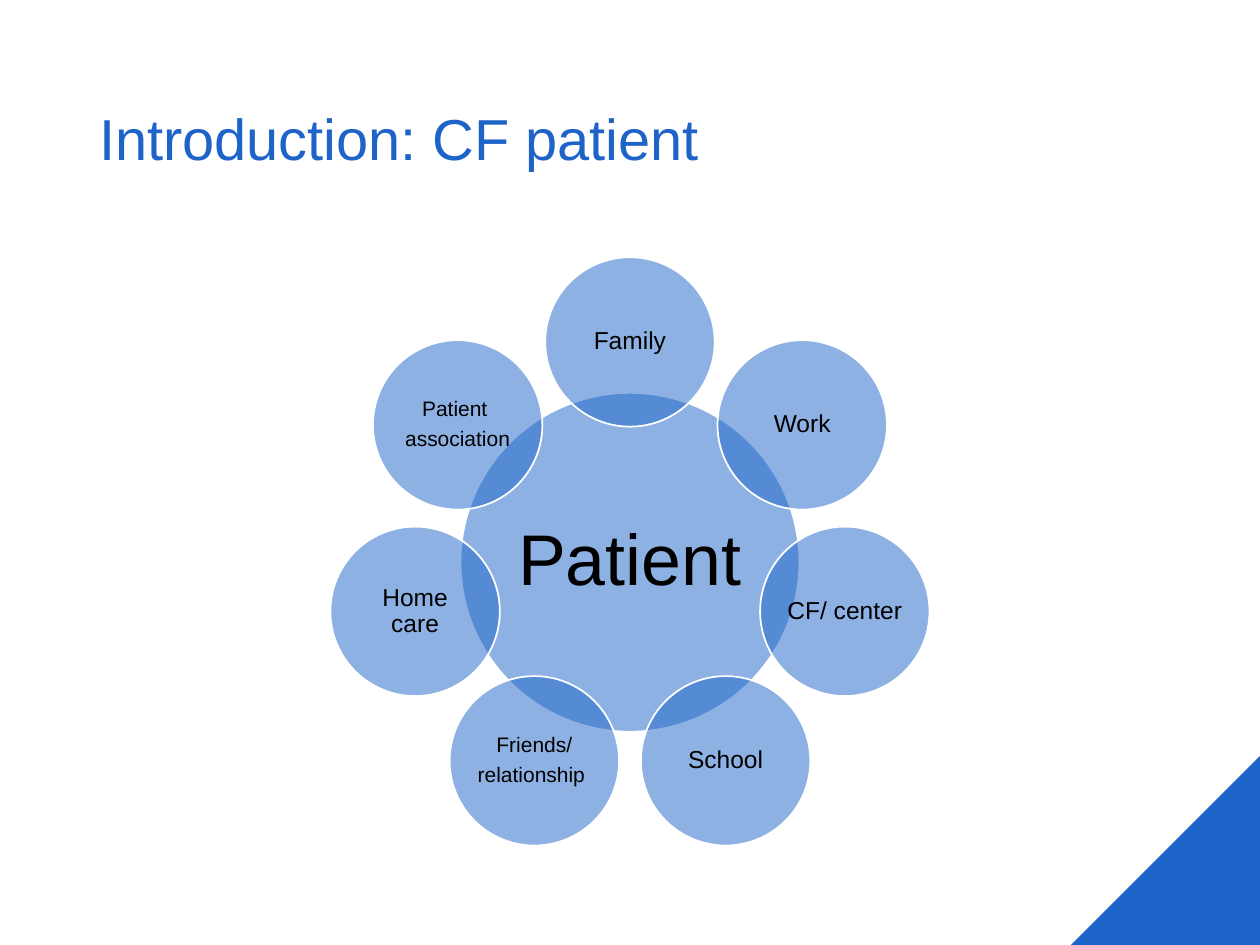
from dataclasses import dataclass
from math import cos, pi, sin

from lxml.etree import SubElement
from pptx import Presentation
from pptx.dml.color import RGBColor
from pptx.enum.shapes import MSO_SHAPE as Preset
from pptx.enum.text import MSO_ANCHOR as Anchor, MSO_AUTO_SIZE as AutoSize, PP_ALIGN as Align
from pptx.oxml.ns import qn
from pptx.util import Pt


@dataclass(frozen=True)
class Theme:
    font: str = "Arial"
    blue: RGBColor = RGBColor(0x1E, 0x64, 0xC8)
    white: RGBColor = RGBColor(0xFF, 0xFF, 0xFF)
    black: RGBColor = RGBColor(0, 0, 0)
    circle_opacity: int = 50
    outline: float = 1
    title_size: int = 33
    hub_size: int = 41
    petal_size: int = 14
    small_petal_size: int = 12
    line_spacing: float = 0.9
    space_after: float = 0.35  # share of the type size


THEME = Theme()
SLIDE_WIDTH, SLIDE_HEIGHT = 720, 540
CORNER_SIDE = 108

HUB = "Patient"
# Clockwise from the top; each petal is a tuple of paragraphs.
PETALS = [
    ("Family",),
    ("Work",),
    ("CF/ center",),
    ("School",),
    ("Friends/", "relationship "),
    ("Home care",),
    ("Patient ", "association"),
]


def write_text(frame, paragraphs, size, color, align, space_after=0):
    for index, words in enumerate(paragraphs):
        paragraph = frame.paragraphs[0] if index == 0 else frame.add_paragraph()
        paragraph.alignment = align
        paragraph.line_spacing = THEME.line_spacing
        paragraph.space_after = Pt(space_after)
        run = paragraph.add_run()
        run.text = words
        for name, value in {"name": THEME.font, "size": Pt(size)}.items():
            setattr(run.font, name, value)
        run.font.color.rgb = color


def place_title(title, left, top, width, height):
    box = {"left": left, "top": top, "width": width, "height": height}
    for name, value in box.items():
        setattr(title, name, Pt(value))
    frame = title.text_frame
    for name, value in {"vertical_anchor": Anchor.MIDDLE, "word_wrap": True,
                        "auto_size": AutoSize.NONE}.items():
        setattr(frame, name, value)
    write_text(frame, ["Introduction: CF patient"], THEME.title_size, THEME.blue, Align.LEFT)


def add_corner(shapes, left, top, side):
    corner = shapes.add_shape(Preset.RIGHT_TRIANGLE, Pt(left), Pt(top), Pt(side), Pt(side))
    corner.shadow.inherit = False
    corner.fill.solid()
    corner.fill.fore_color.rgb = THEME.blue
    corner.line.fill.background()
    corner._element.spPr.find(qn("a:xfrm")).set("flipH", "1")


def add_circle(shapes, center_x, center_y, diameter, paragraphs, size, inset):
    """Add a translucent labelled circle around the given centre."""
    circle = shapes.add_shape(Preset.OVAL, Pt(center_x - diameter / 2),
                              Pt(center_y - diameter / 2), Pt(diameter), Pt(diameter))
    circle.shadow.inherit = False
    circle.fill.solid()
    circle.fill.fore_color.rgb = THEME.blue
    tint = circle._element.spPr.find(qn("a:solidFill")).find(qn("a:srgbClr"))
    SubElement(tint, qn("a:alpha")).set("val", str(THEME.circle_opacity * 1000))
    circle.line.color.rgb = THEME.white
    circle.line.width = Pt(THEME.outline)

    frame = circle.text_frame
    frame.word_wrap = True
    frame.vertical_anchor = Anchor.MIDDLE
    for side in ("left", "top", "right", "bottom"):
        setattr(frame, f"margin_{side}", Pt(inset))
    write_text(frame, paragraphs, size, THEME.black, Align.CENTER, size * THEME.space_after)


def add_radial_venn(shapes, left, top, width, height):
    """Fit a hub and its ring of half-size petals under the top middle of the box."""
    step = 2 * pi / len(PETALS)
    # The box height spans the top petal, the ring and the lowest petals.
    petal = height * 0.288
    ring = (height - petal) / (1 + cos(step / 2))
    center_x = left + width / 2
    center_y = top + petal / 2 + ring

    venn = shapes.add_group_shape().shapes
    add_circle(venn, center_x, center_y, 2 * petal, [HUB], THEME.hub_size, 4)
    for index, paragraphs in enumerate(PETALS):
        size = THEME.petal_size if len(paragraphs) == 1 else THEME.small_petal_size
        add_circle(venn, center_x + ring * sin(index * step),
                   center_y - ring * cos(index * step), petal, paragraphs, size, 1)


def main():
    deck = Presentation()
    deck.slide_width, deck.slide_height = Pt(SLIDE_WIDTH), Pt(SLIDE_HEIGHT)
    slide = deck.slides.add_slide(deck.slide_layouts[5])
    slide.background.fill.solid()
    slide.background.fill.fore_color.rgb = THEME.white

    place_title(slide.shapes.title, 49.5, 28.75, 621, 104.4)
    add_corner(slide.shapes, SLIDE_WIDTH - CORNER_SIDE, SLIDE_HEIGHT - CORNER_SIDE, CORNER_SIDE)
    add_radial_venn(slide.shapes, 49.5, 147, 621, 336.2)
    deck.save("out.pptx")


if __name__ == "__main__":
    main()
